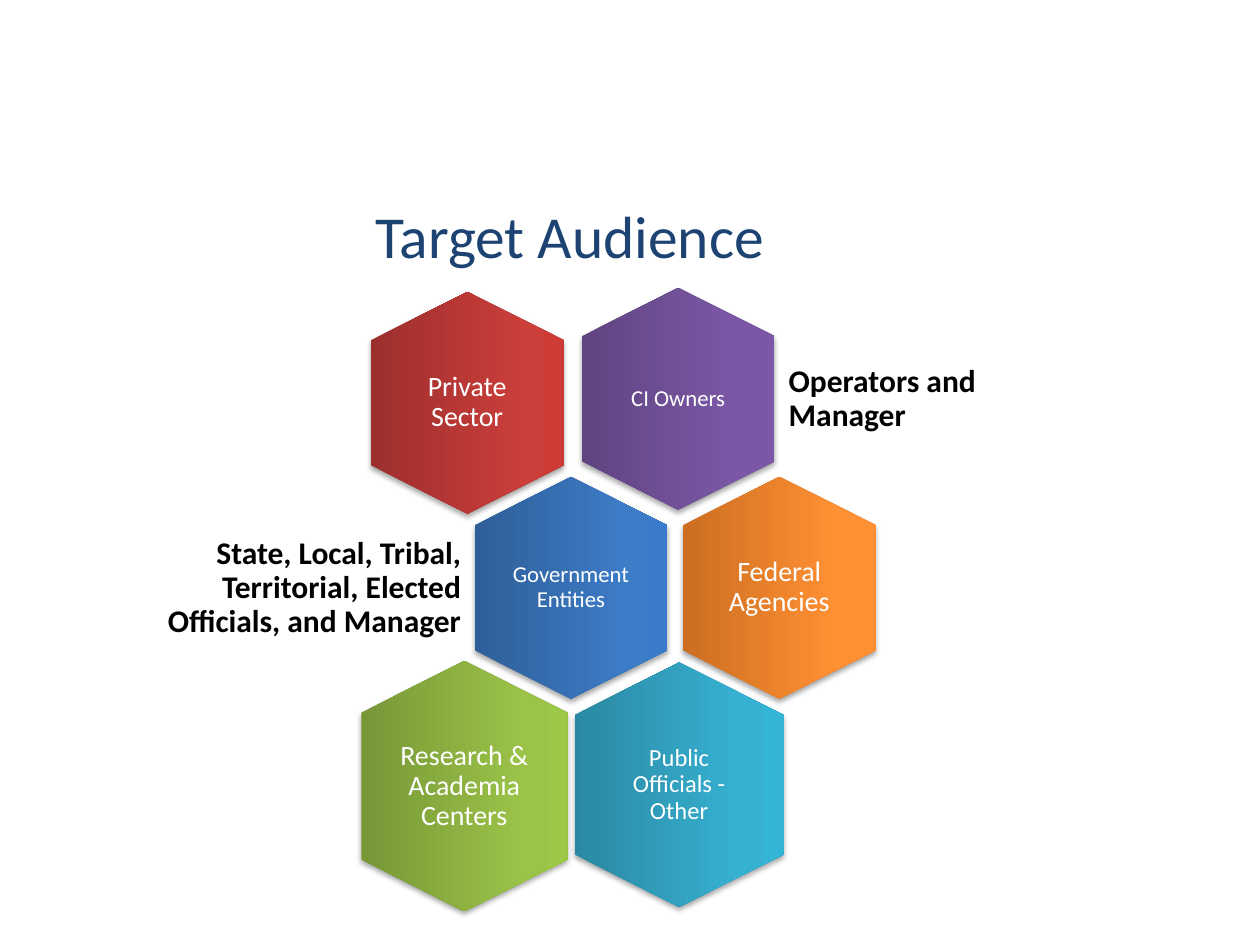
from dataclasses import dataclass

from lxml.etree import SubElement
from pptx import Presentation
from pptx.dml.color import RGBColor
from pptx.enum.shapes import MSO_SHAPE
from pptx.enum.text import MSO_ANCHOR, PP_ALIGN
from pptx.oxml import parse_xml
from pptx.oxml.ns import nsdecls, qn
from pptx.slide import Slide
from pptx.util import Cm, Pt

FONT = "Calibri"
TEXT_SHARE = 0.69  # part of a hexagon's width and height that its text may use


@dataclass
class Hexagon:
    """A pointed-top hexagon; lengths in centimetres."""
    text: str
    center_x: float
    center_y: float
    width: float
    height: float
    gradient: tuple[str, str, str]
    font_size: int
    inset: float = 0


@dataclass
class Label:
    text: str
    left: float
    top: float
    width: float
    height: float
    alignment: PP_ALIGN


HEXAGONS = [
    Hexagon("CI Owners", 13.67, 8.04, 3.89, 4.47, ("5F4480", "7B58A6", "7C57A8"), 13, 0.13),
    Hexagon("Private Sector", 9.42, 8.12, 3.89, 4.47, ("9C2F2D", "CB3E3A", "CE3B37"), 16),
    Hexagon("Government Entities", 11.51, 11.85, 3.89, 4.47, ("2F5F99", "3D7CC7", "3A7CCB"), 13, 0.13),
    Hexagon("Federal Agencies", 15.71, 11.85, 3.89, 4.47, ("CC6E20", "FF9034", "FF9136"), 16),
    Hexagon("Public Officials - Other", 13.69, 15.82, 4.22, 4.93, ("2A88A2", "37B1D2", "34B4D6"), 14, 0.15),
    Hexagon("Research & Academia Centers", 9.36, 15.85, 4.17, 5.05, ("779737", "9BC348", "9DC746"), 16),
]
LABELS = [
    Label("Operators and Manager", 15.72, 6.71, 5.0, 2.69, PP_ALIGN.LEFT),
    Label("State, Local, Tribal, Territorial, Elected Officials, and Manager",
          2.9, 10.52, 6.58, 2.69, PP_ALIGN.RIGHT),
]


def color(value: str) -> RGBColor:
    return RGBColor.from_string(value)


def add_text(slide: Slide, text: str, left: float, top: float, width: float, height: float,
             size: int, font_color: str, alignment: PP_ALIGN, inset: float,
             right_inset: float | None = None, bold: bool = False, line_spacing: float = 0.9) -> None:
    box = slide.shapes.add_textbox(Cm(left), Cm(top), Cm(width), Cm(height))
    frame = box.text_frame
    frame.word_wrap = True
    frame.vertical_anchor = MSO_ANCHOR.MIDDLE
    frame.margin_left = frame.margin_top = frame.margin_bottom = Cm(inset)
    frame.margin_right = Cm(inset if right_inset is None else right_inset)
    paragraph = frame.paragraphs[0]
    paragraph.text = text
    paragraph.alignment = alignment
    paragraph.line_spacing = line_spacing
    paragraph.font.name = FONT
    paragraph.font.size = Pt(size)
    paragraph.font.bold = bold
    paragraph.font.color.rgb = color(font_color)


def add_hexagon(slide: Slide, hexagon: Hexagon) -> None:
    """Draw the preset hexagon turned a quarter, with upright text over it."""
    shape = slide.shapes.add_shape(
        MSO_SHAPE.HEXAGON,
        Cm(hexagon.center_x - hexagon.height / 2), Cm(hexagon.center_y - hexagon.width / 2),
        Cm(hexagon.height), Cm(hexagon.width))
    shape.rotation = 90
    shape.adjustments[0] = 0.25
    shape.adjustments[1] = 1.15
    shape.line.fill.background()
    set_gradient(shape, hexagon.gradient)
    set_soft_shadow(shape)

    width, height = hexagon.width * TEXT_SHARE, hexagon.height * TEXT_SHARE
    add_text(slide, hexagon.text, hexagon.center_x - width / 2, hexagon.center_y - height / 2,
             width, height, hexagon.font_size, "FFFFFF", PP_ALIGN.CENTER, hexagon.inset)


def set_gradient(shape, colors: tuple[str, str, str]) -> None:
    stops = "".join(
        f'<a:gs pos="{position * 1000}"><a:srgbClr val="{color(value)}"/></a:gs>'
        for position, value in zip((0, 80, 100), colors))
    gradient = parse_xml(
        f'<a:gradFill {nsdecls("a")} rotWithShape="1"><a:gsLst>{stops}</a:gsLst>'
        '<a:lin ang="16200000" scaled="0"/></a:gradFill>')
    shape._element.spPr.find(qn("a:prstGeom")).addnext(gradient)


def set_soft_shadow(shape) -> None:
    shape.shadow.inherit = False
    effects = shape._element.spPr.find(qn("a:effectLst"))
    shadow = SubElement(effects, qn("a:outerShdw"), blurRad=str(Pt(3.1)), dist=str(Pt(1.8)),
                        dir="5400000", rotWithShape="0")
    shade = SubElement(shadow, qn("a:srgbClr"), val="000000")
    SubElement(shade, qn("a:alpha"), val="35000")


def main() -> None:
    presentation = Presentation()
    presentation.slide_width, presentation.slide_height = Cm(25.4), Cm(19.05)
    slide = presentation.slides.add_slide(presentation.slide_layouts[6])
    add_text(slide, "Target Audience", 1.24, 3.84, 22.86, 1.78, 34, "1C4372",
             PP_ALIGN.CENTER, 0.13, right_inset=2.5, line_spacing=1.0)
    for hexagon in HEXAGONS:
        add_hexagon(slide, hexagon)
    for label in LABELS:
        add_text(slide, label.text, label.left, label.top, label.width, label.height,
                 18, "000000", label.alignment, 0.18, bold=True)
    presentation.save("out.pptx")


if __name__ == "__main__":
    main()
